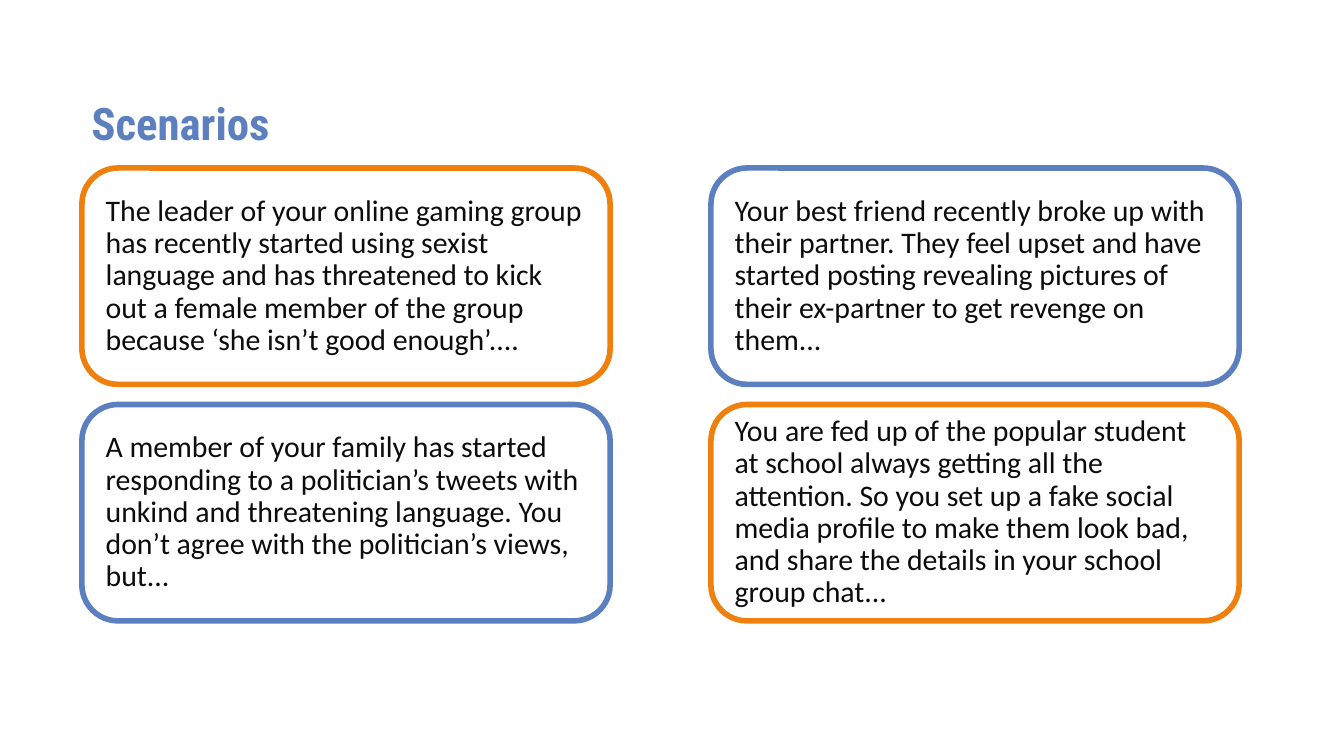
"""Build a slide with four online behaviour scenarios in a two by two grid."""
import pptx
import pptx.dml.color
import pptx.enum.shapes
import pptx.enum.text
import pptx.util

BLUE, ORANGE, INK = "5B7FBF", "F0800E", "0C0C0C"
TITLE = "Scenarios"
SCENARIOS = [
    [
        ("The leader of your online gaming group has recently started using sexist "
         "language and has threatened to kick out a female member of the group "
         "because ‘she isn’t good enough’....", ORANGE),
        ("Your best friend recently broke up with their partner. They feel upset and "
         "have started posting revealing pictures of their ex-partner to get revenge "
         "on them...", BLUE),
    ],
    [
        ("A member of your family has started responding to a politician’s tweets "
         "with unkind and threatening language. You don’t agree with the "
         "politician’s views, but...", BLUE),
        ("You are fed up of the popular student at school always getting all the "
         "attention. So you set up a fake social media profile to make them look bad, "
         "and share the details in your school group chat...", ORANGE),
    ],
]
LEFT, TOP = 0.61, 1.25
CARD_WIDTH, CARD_HEIGHT = 3.93, 1.61
COLUMN_STEP, ROW_STEP = 4.68, 1.76


def colour(value):
    """Turn a hex string into a colour."""
    return pptx.dml.color.RGBColor.from_string(value)


def write(shape, text, font, size, ink, insets, bold=False):
    """Fill a shape with one left-aligned, vertically centred paragraph."""
    frame = shape.text_frame
    frame.word_wrap = True
    frame.vertical_anchor = pptx.enum.text.MSO_ANCHOR.MIDDLE
    side, edge = map(pptx.util.Inches, insets)
    frame.margin_left = frame.margin_right = side
    frame.margin_top = frame.margin_bottom = edge
    para = frame.paragraphs[0]
    para.alignment = pptx.enum.text.PP_ALIGN.LEFT
    para.line_spacing = 0.9
    span = para.add_run()
    span.text = text
    span.font.name = font
    span.font.size = pptx.util.Pt(size)
    span.font.bold = bold
    span.font.color.rgb = colour(ink)


def add_card(slide, row, column, text, outline):
    """Add one outlined scenario card at its grid position."""
    bounds = (LEFT + column * COLUMN_STEP, TOP + row * ROW_STEP, CARD_WIDTH, CARD_HEIGHT)
    card = slide.shapes.add_shape(
        pptx.enum.shapes.MSO_SHAPE.ROUNDED_RECTANGLE, *map(pptx.util.Inches, bounds))
    card.shadow.inherit = False
    card.fill.background()
    card.line.color.rgb = colour(outline)
    card.line.width = pptx.util.Pt(3)
    write(card, text, "Calibri", 16, INK, (0.1, 0.1))


def main():
    """Create and save the deck."""
    deck = pptx.Presentation()
    deck.slide_width = pptx.util.Inches(10)
    deck.slide_height = deck.slide_width * 9 // 16
    slide = deck.slides.add_slide(deck.slide_layouts[6])
    title = slide.shapes.add_textbox(*map(pptx.util.Inches, (LEFT, 0.37, 3.3, 1.13)))
    write(title, TITLE, "Roboto Condensed", 24, BLUE, (0.07, 0.04), bold=True)
    for row, cards in enumerate(SCENARIOS):
        for column, (text, outline) in enumerate(cards):
            add_card(slide, row, column, text, outline)
    deck.save("out.pptx")


if __name__ == "__main__":
    main()
